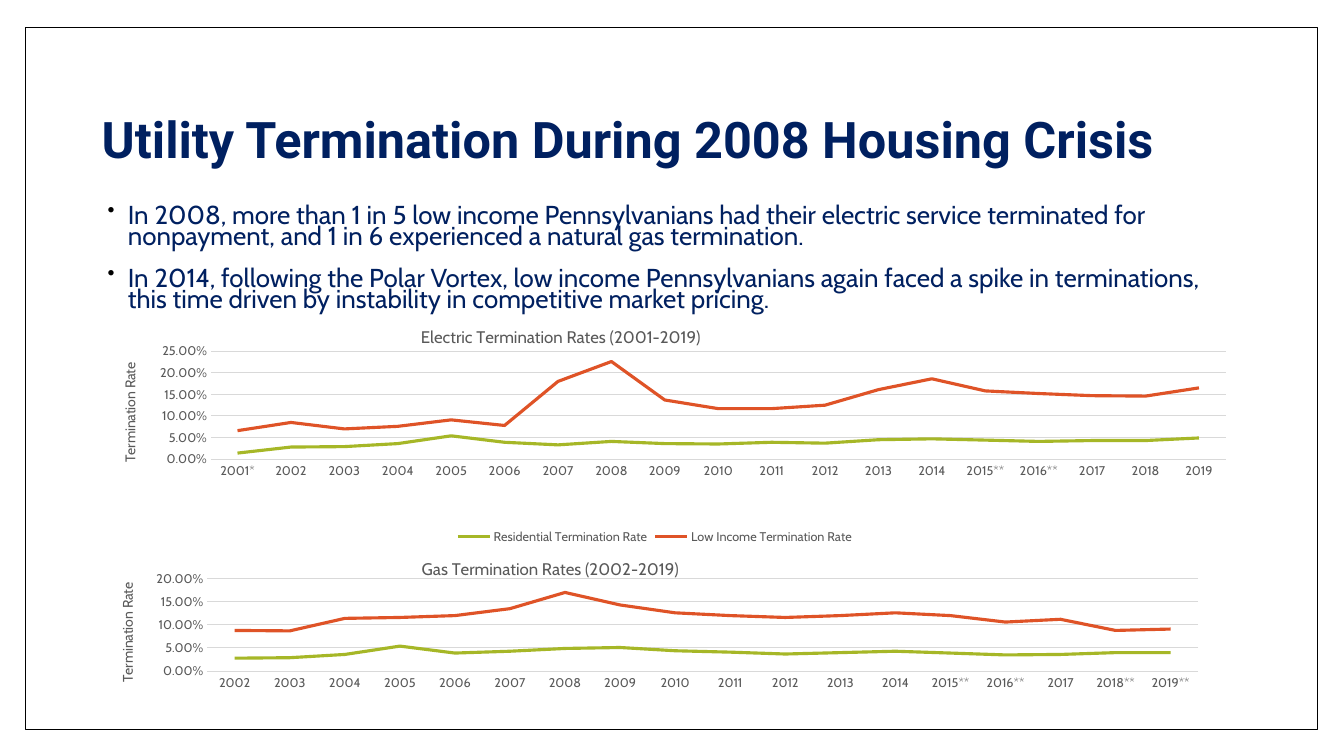
from dataclasses import dataclass

from lxml.etree import SubElement
from pptx import Presentation
from pptx.chart.chart import Chart
from pptx.chart.data import CategoryChartData
from pptx.dml.color import RGBColor
from pptx.enum.chart import XL_CHART_TYPE, XL_LEGEND_POSITION, XL_TICK_MARK
from pptx.enum.shapes import MSO_SHAPE
from pptx.enum.text import MSO_ANCHOR
from pptx.oxml.ns import qn
from pptx.slide import Slide
from pptx.text.text import Font, TextFrame
from pptx.util import Emu, Inches, Pt

WIDTH, HEIGHT = Inches(13.33), Inches(7.5)


@dataclass(frozen=True)
class Theme:
    head: str = "Roboto"
    body: str = "Cabin"
    navy: str = "002060"
    black: str = "000000"
    white: str = "FFFFFF"
    gray: str = "595959"
    grid: str = "D9D9D9"
    lines: tuple[str, ...] = ("A6B727", "DF5327")
    title: float = 36
    text: float = 18.5
    name: float = 12
    axis: float = 10
    tick: float = 9


@dataclass(frozen=True)
class Box:
    """Left, top, width and height in percent of the slide."""
    left: float
    top: float
    wide: float
    high: float

    def emu(self) -> tuple[Emu, ...]:
        return (Emu(int(WIDTH * self.left / 100)), Emu(int(HEIGHT * self.top / 100)),
                Emu(int(WIDTH * self.wide / 100)), Emu(int(HEIGHT * self.high / 100)))


@dataclass(frozen=True)
class Graph:
    """One line chart; rates and inner places are in percent."""
    box: Box
    name: str
    first: int
    marks: dict[int, str]
    rates: tuple[list[float], ...]
    top: float
    plot: tuple[float, ...]
    name_at: tuple[float, ...]
    axis_at: tuple[float, ...]
    legend: bool


THEME = Theme()
LAST = 2019
SERIES = ("Residential Termination Rate", "Low Income Termination Rate")
FRAME = Box(1.88, 3.6, 96.17, 92.93)
HEAD = Box(6.83, 8.93, 86.27, 19.73)
BODY = Box(6.9, 26.67, 86.27, 16.93)
TITLE = "Utility Termination During 2008 Housing Crisis"
POINTS = (
    "In 2008, more than 1 in 5 low income Pennsylvanians had their electric service "
    "terminated for nonpayment, and 1 in 6 experienced a natural gas termination.",
    "In 2014, following the Polar Vortex, low income Pennsylvanians again faced a spike in "
    "terminations, this time driven by instability in competitive market pricing.",
)
GRAPHS = (
    Graph(Box(4.2, 41.6, 89.05, 30.93), "Electric Termination Rates (2001-2019)", 2001,
          {2001: "*", 2015: "**", 2016: "**"},
          ([1.4, 2.8, 2.9, 3.6, 5.4, 3.9, 3.3, 4.1, 3.6, 3.5, 3.9, 3.7, 4.5, 4.7, 4.4, 4.1,
            4.3, 4.3, 4.9],
           [6.6, 8.5, 7, 7.6, 9.1, 7.8, 18, 22.6, 13.7, 11.7, 11.7, 12.5, 16.1, 18.6, 15.8,
            15.2, 14.7, 14.6, 16.5]),
          25, (12.9, 15.7, 84.8, 46.2), (30.2, 3.5), (5.1, 19.5), True),
    Graph(Box(4.2, 72.13, 86.95, 26.53), "Gas Termination Rates (2002-2019)", 2002,
          {2015: "**", 2016: "**", 2018: "**", 2019: "**"},
          ([2.8, 2.9, 3.6, 5.4, 3.9, 4.3, 4.9, 5.1, 4.4, 4.1, 3.7, 4, 4.3, 3.9, 3.5, 3.6,
            4, 4],
           [8.8, 8.7, 11.4, 11.6, 12, 13.5, 17, 14.3, 12.6, 12, 11.6, 12, 12.6, 12, 10.6,
            11.2, 8.8, 9.1]),
          20, (12.9, 16.6, 84.8, 46.2), (31, 4.5), (5, 17.3), False),
)


def color(code: str) -> RGBColor:
    return RGBColor.from_string(code)


def style(font: Font, face: str, size: float, code: str, bold: bool = False) -> None:
    font.name, font.size, font.bold = face, Pt(size), bold
    font.color.rgb = color(code)


def add_frame(slide: Slide) -> None:
    frame = slide.shapes.add_shape(MSO_SHAPE.RECTANGLE, *FRAME.emu())
    frame.shadow.inherit = False
    frame.fill.solid()
    frame.fill.fore_color.rgb = color(THEME.white)
    frame.line.color.rgb = color(THEME.black)
    frame.line.width = Pt(1)


def add_text(slide: Slide, box: Box) -> TextFrame:
    text = slide.shapes.add_textbox(*box.emu()).text_frame
    text.word_wrap = True
    return text


def add_title(slide: Slide) -> None:
    text = add_text(slide, HEAD)
    text.vertical_anchor = MSO_ANCHOR.MIDDLE
    para = text.paragraphs[0]
    para.text, para.line_spacing = TITLE, 0.9
    style(para.font, THEME.head, THEME.title, THEME.navy, True)


def add_points(slide: Slide) -> None:
    text = add_text(slide, BODY)
    text.text = "\n".join(POINTS)
    for para in text.paragraphs:
        para.line_spacing, para.space_before = 0.7, Pt(14)
        style(para.font, THEME.body, THEME.text, THEME.navy)
        props = para._p.get_or_add_pPr()
        props.set("marL", str(Inches(0.25)))
        props.set("indent", str(Inches(-0.2)))
        rest = props.find(qn("a:defRPr"))
        tint = SubElement(props, qn("a:buClr"))
        SubElement(tint, qn("a:srgbClr"), val=THEME.black)
        SubElement(props, qn("a:buSzPct"), val="80000")
        SubElement(props, qn("a:buChar"), char="•")
        if rest is not None:
            props.append(rest)


def place(node, spot: int, share: tuple[float, ...]) -> None:
    """Give a chart part a manual layout, as its child number spot."""
    for old in node.findall(qn("c:layout")):
        node.remove(old)
    layout = SubElement(node, qn("c:layout"))
    node.insert(spot, layout)
    manual = SubElement(layout, qn("c:manualLayout"))
    if len(share) == 4:
        SubElement(manual, qn("c:layoutTarget"), val="inner")
    for key in "xy":
        SubElement(manual, qn(f"c:{key}Mode"), val="edge")
    for key, part in zip("xywh", share):
        SubElement(manual, qn(f"c:{key}"), val=f"{part / 100:.3f}")


def add_name(title, text: str, size: float, share: tuple[float, ...]) -> None:
    para = title.text_frame.paragraphs[0]
    para.text = text
    style(para.font, THEME.body, size, THEME.gray)
    place(title._element, 1, share)


def set_axes(chart: Chart, graph: Graph) -> None:
    cats, vals = chart.category_axis, chart.value_axis
    for axis in (cats, vals):
        axis.major_tick_mark = axis.minor_tick_mark = XL_TICK_MARK.NONE
        style(axis.tick_labels.font, THEME.body, THEME.tick, THEME.gray)
    vals.minimum_scale, vals.maximum_scale, vals.major_unit = 0, graph.top / 100, 0.05
    vals.tick_labels.number_format = "0.00%"
    vals.tick_labels.number_format_is_linked = False
    vals.format.line.fill.background()
    for line in (cats.format.line, vals.major_gridlines.format.line):
        line.color.rgb, line.width = color(THEME.grid), Pt(0.75)
    add_name(vals.axis_title, "Termination Rate", THEME.axis, graph.axis_at)
    turn = vals.axis_title.text_frame._txBody.bodyPr
    turn.set("rot", "-5400000")
    turn.set("vert", "horz")


def add_graph(slide: Slide, graph: Graph) -> None:
    data = CategoryChartData(number_format="0.00%")
    data.categories = [f"{year}{graph.marks.get(year, '')}"
                       for year in range(graph.first, LAST + 1)]
    for name, rates in zip(SERIES, graph.rates):
        data.add_series(name, [round(rate / 100, 3) for rate in rates])
    chart = slide.shapes.add_chart(XL_CHART_TYPE.LINE, *graph.box.emu(), data).chart
    style(chart.font, THEME.body, THEME.axis, THEME.black)
    chart.has_title = True
    add_name(chart.chart_title, graph.name, THEME.name, graph.name_at)
    set_axes(chart, graph)
    place(chart._chartSpace.chart.plotArea, 0, graph.plot)
    chart.plots[0].vary_by_categories = False
    for line, code in zip(chart.series, THEME.lines):
        line.smooth = False
        line.format.line.color.rgb = color(code)
        line.format.line.width = Pt(2.25)
    chart.has_legend = graph.legend
    if graph.legend:
        chart.legend.position = XL_LEGEND_POSITION.BOTTOM
        chart.legend.include_in_layout = False
        style(chart.legend.font, THEME.body, THEME.tick, THEME.gray)


def main() -> None:
    deck = Presentation()
    deck.slide_width, deck.slide_height = WIDTH, HEIGHT
    slide = deck.slides.add_slide(deck.slide_layouts[6])
    add_frame(slide)
    add_title(slide)
    add_points(slide)
    for graph in GRAPHS:
        add_graph(slide, graph)
    deck.save("out.pptx")


if __name__ == "__main__":
    main()
